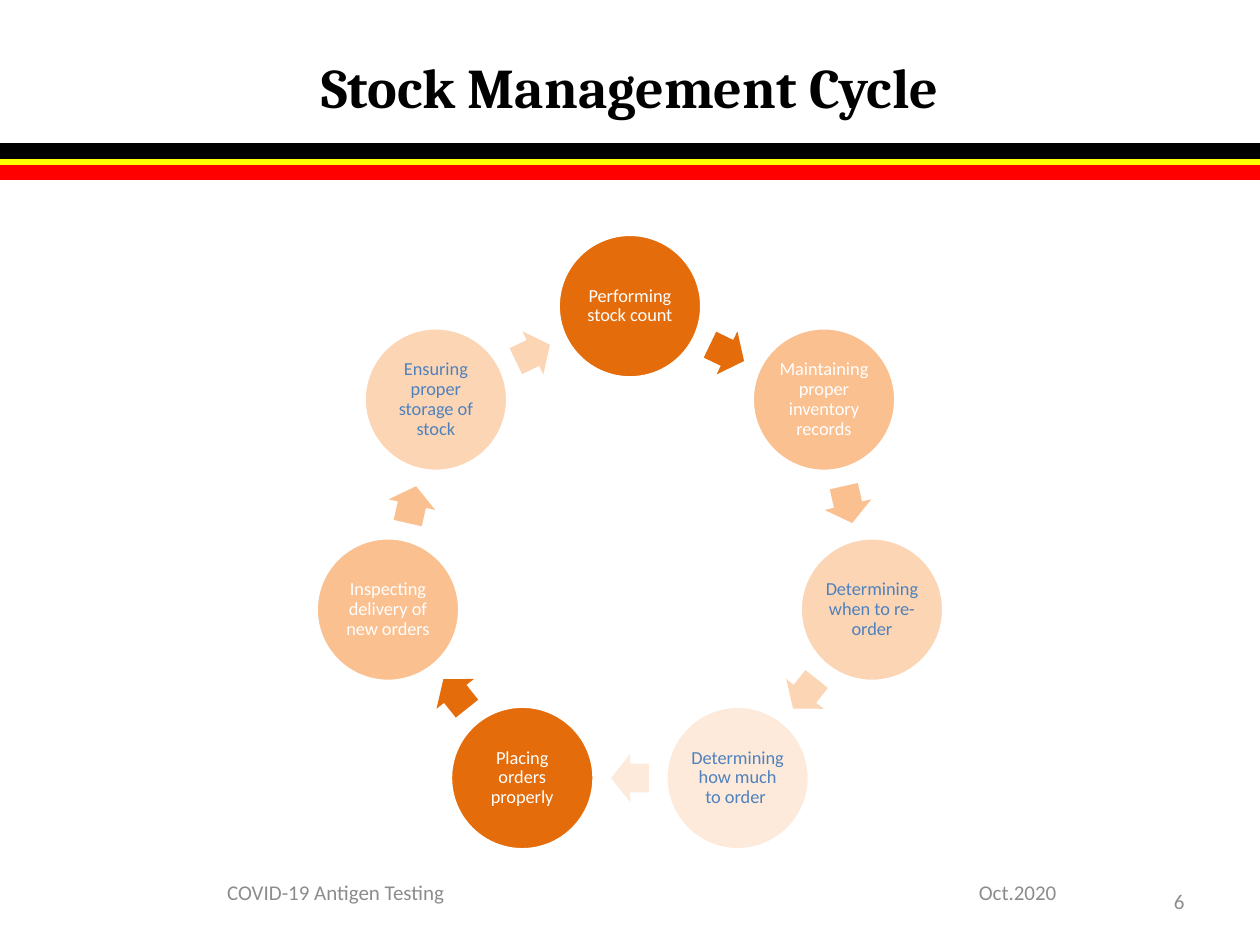
from math import cos, radians, sin

from lxml.etree import SubElement
from pptx import Presentation
from pptx.dml.color import RGBColor
from pptx.enum.shapes import MSO_CONNECTOR as Connector, MSO_SHAPE as Shape
from pptx.enum.text import MSO_ANCHOR as Anchor, PP_ALIGN as Align
from pptx.oxml.ns import qn
from pptx.util import Inches, Pt

BLACK = RGBColor(0x00, 0x00, 0x00)
YELLOW = RGBColor(0xFF, 0xFF, 0x00)
RED = RGBColor(0xFF, 0x00, 0x00)
WHITE = RGBColor(0xFF, 0xFF, 0xFF)
GREY = RGBColor(0x8C, 0x8C, 0x8C)
BLUE = RGBColor(0x4F, 0x81, 0xBD)
ORANGE = RGBColor(0xE4, 0x6C, 0x0A)
APRICOT = RGBColor(0xFA, 0xC0, 0x90)
PEACH = RGBColor(0xFC, 0xD5, 0xB5)
CREAM = RGBColor(0xFD, 0xEA, 0xDA)

WIDTH, HEIGHT = Inches(10), Inches(7.5)
COLUMN, ROW = WIDTH / 100, HEIGHT / 75
CENTRE_X, CENTRE_Y, RADIUS = 50, 44, 19.7
CIRCLE, ARROW_LENGTH, ARROW_HEIGHT = 11.4, 3, 3.8

STEPS = [
    ("Performing stock count", ORANGE, WHITE),
    ("Maintaining proper inventory records", APRICOT, WHITE),
    ("Determining when to re-order", PEACH, BLUE),
    ("Determining how much to order ", CREAM, BLUE),
    ("Placing orders properly", ORANGE, WHITE),
    ("Inspecting delivery of new orders", APRICOT, WHITE),
    ("Ensuring proper storage of stock", PEACH, BLUE),
]


def grid(left, top, width, height):
    """Turn columns and rows into slide lengths."""
    return (round(left * COLUMN), round(top * ROW),
            round(width * COLUMN), round(height * ROW))


def write(shape, text, size, color, align, font="Calibri", bold=False):
    """Write one paragraph, centred vertically, and return it."""
    frame = shape.text_frame
    frame.word_wrap = True
    frame.vertical_anchor = Anchor.MIDDLE
    para = frame.paragraphs[0]
    para.alignment = align
    span = para.add_run()
    span.text = text
    span.font.name, span.font.size = font, Pt(size)
    span.font.bold, span.font.color.rgb = bold, color
    return para


def add_label(page, place, *style, **extra):
    """Add a text box at a grid place."""
    write(page.shapes.add_textbox(*grid(*place)), *style, **extra)


def add_stripe(page, row, color):
    """Draw a thick line across the page."""
    left, top, right, bottom = grid(-0.3, row, 100, row)
    stripe = page.shapes.add_connector(Connector.STRAIGHT, left, top, right, bottom)
    stripe.line.color.rgb, stripe.line.width = color, Pt(9)
    SubElement(stripe._element.spPr, qn("a:effectLst"))


def add_centred(page, kind, x, y, width, height, color):
    """Add a filled shape around a centre point."""
    shape = page.shapes.add_shape(
        kind, *grid(x - width / 2, y - height / 2, width, height))
    shape.shadow.inherit = False
    shape.fill.solid()
    shape.fill.fore_color.rgb = color
    shape.line.fill.background()
    return shape


def on_ring(angle, radius):
    """Return the point at a clockwise angle from the top of the ring."""
    turn = radians(angle)
    return CENTRE_X + radius * sin(turn), CENTRE_Y - radius * cos(turn)


def add_step(page, angle, text, color, ink):
    """Add one circle of the cycle with its wording."""
    circle = add_centred(page, Shape.OVAL, *on_ring(angle, RADIUS),
                         CIRCLE, CIRCLE, color)
    circle.line.color.rgb, circle.line.width = WHITE, Pt(2)
    frame = circle.text_frame
    frame.margin_left = frame.margin_right = Inches(0.02)
    frame.margin_top = frame.margin_bottom = Inches(0.02)
    write(circle, text, 10.5, ink, Align.CENTER).line_spacing = 0.9


def add_arrow(page, angle, radius, color):
    """Add an arrow that points clockwise along the ring."""
    arrow = add_centred(page, Shape.RIGHT_ARROW, *on_ring(angle, radius),
                        ARROW_LENGTH, ARROW_HEIGHT, color)
    arrow.adjustments[0], arrow.adjustments[1] = 0.6, 0.5
    arrow.rotation = angle


def add_cycle(page):
    """Spread the steps and arrows evenly around the ring."""
    gap = 360 / len(STEPS)
    chord_radius = RADIUS * cos(radians(gap / 2))
    for index, (text, color, ink) in enumerate(STEPS):
        add_step(page, index * gap, text, color, ink)
        add_arrow(page, (index + 0.5) * gap, chord_radius, color)


def main():
    """Build and save the slide."""
    deck = Presentation()
    deck.slide_width, deck.slide_height = WIDTH, HEIGHT
    page = deck.slides.add_slide(deck.slide_layouts[6])
    for row, color in ((12.9, YELLOW), (13.7, RED), (12, BLACK)):
        add_stripe(page, row, color)
    add_label(page, (2.9, 2.2, 94.2, 9.2), "Stock Management Cycle", 32, BLACK,
              Align.CENTER, font="Cambria", bold=True)
    add_label(page, (71.7, 69.5, 23.3, 4), "6", 12, GREY, Align.RIGHT)
    add_label(page, (76.7, 68.8, 23.3, 4), "Oct.2020", 12, GREY, Align.LEFT)
    add_label(page, (0, 68.8, 53.3, 4), "COVID-19 Antigen Testing", 12, GREY,
              Align.CENTER)
    add_cycle(page)
    deck.save("out.pptx")


if __name__ == "__main__":
    main()
